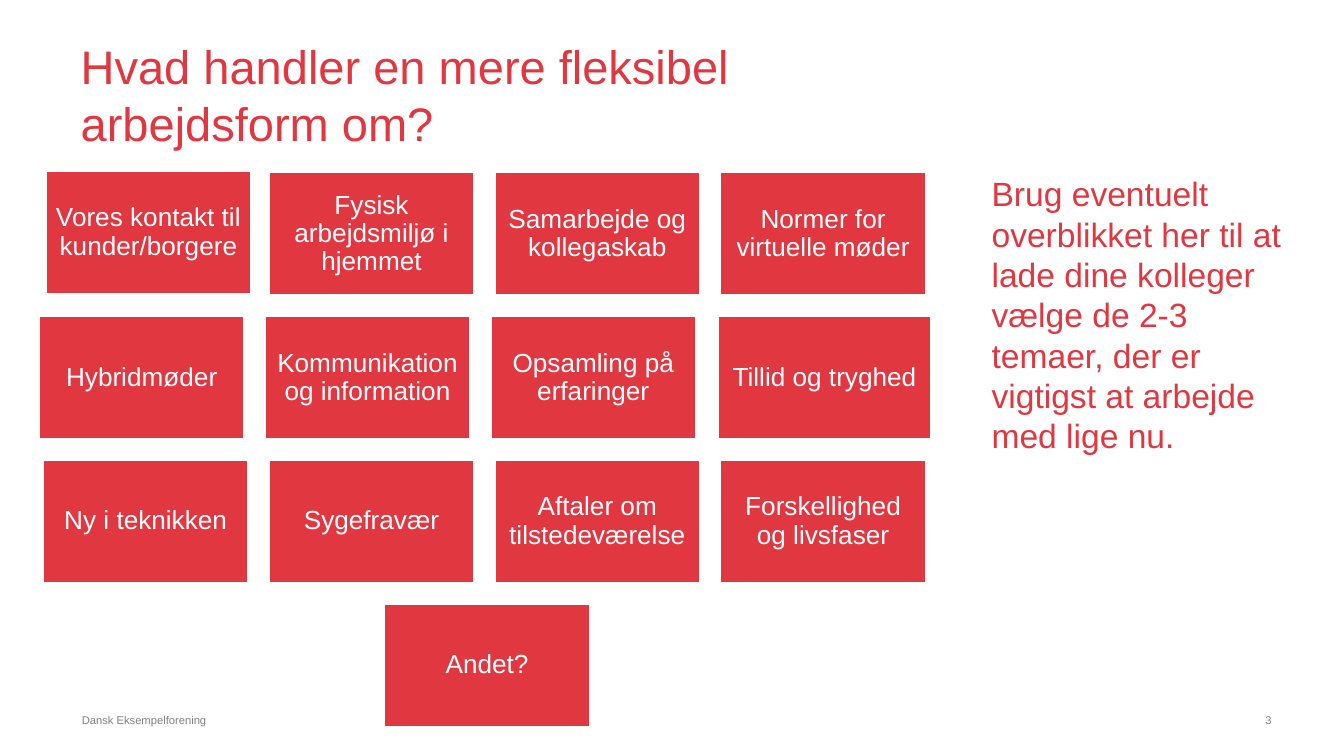
from pptx import Presentation
from pptx.dml.color import RGBColor
from pptx.enum.shapes import MSO_SHAPE as Shape
from pptx.enum.text import MSO_ANCHOR as Anchor, PP_ALIGN as Align
from pptx.util import Inches, Pt

RED, WHITE, GRAY = "E13741", "FFFFFF", "808080"
CARD_WIDTH, CARD_HEIGHT = 1.53, 0.92
COLUMN_STEP, ROW_STEP = 1.68, 1.07
FIRST_ROW_TOP = 1.28

THEME_ROWS = [
    (0.32, ["Vores kontakt til kunder/borgere", "Fysisk arbejdsmiljø i hjemmet",
            "Samarbejde og kollegaskab", "Normer for virtuelle møder"]),
    (0.29, ["Hybridmøder", "Kommunikation og information",
            "Opsamling på erfaringer", "Tillid og tryghed"]),
    (0.32, ["Ny i teknikken", "Sygefravær",
            "Aftaler om tilstedeværelse", "Forskellighed og livsfaser"]),
    (2.86, ["Andet?"]),
]
SPECIAL_PLACES = {
    "Vores kontakt til kunder/borgere": (0.34, 1.27, CARD_WIDTH),
    "Tillid og tryghed": (5.34, 2.35, 1.59),
}


def color(value):
    """Turn a hex string into a colour."""
    return RGBColor.from_string(value)


def write_text(shape, text, size=14, fill=RED, align=Align.LEFT,
               anchor=Anchor.TOP, spacing=None, margins=(0.1, 0.05)):
    """Fill a shape with one formatted paragraph."""
    frame = shape.text_frame
    frame.word_wrap = True
    frame.vertical_anchor = anchor
    frame.margin_left = frame.margin_right = Inches(margins[0])
    frame.margin_top = frame.margin_bottom = Inches(margins[1])
    paragraph = frame.paragraphs[0]
    paragraph.alignment = align
    paragraph.line_spacing = spacing
    run = paragraph.add_run()
    run.text = text
    run.font.name = "Arial"
    run.font.size = Pt(size)
    run.font.color.rgb = color(fill)


def add_text(slide, text, left, top, width, height, **text_format):
    """Add a text box with formatted text."""
    box = slide.shapes.add_textbox(*map(Inches, (left, top, width, height)))
    write_text(box, text, **text_format)


def add_title(slide, text):
    """Place and fill the title placeholder."""
    title = slide.shapes.title
    title.left, title.top = Inches(0.5), Inches(0.23)
    title.width, title.height = Inches(6.07), Inches(0.94)
    write_text(title, text, size=25.2, anchor=Anchor.MIDDLE)


def add_card(slide, text, left, top, width):
    """Add a red theme card."""
    card = slide.shapes.add_shape(
        Shape.RECTANGLE, *map(Inches, (left, top, width, CARD_HEIGHT)))
    card.shadow.inherit = False
    card.fill.solid()
    card.fill.fore_color.rgb = color(RED)
    card.line.color.rgb = color(WHITE)
    card.line.width = Pt(1.25)
    write_text(card, text, fill=WHITE, align=Align.CENTER,
               anchor=Anchor.MIDDLE, spacing=0.9, margins=(0.06, 0.06))


def add_theme_cards(slide):
    """Lay out the theme cards in rows."""
    for row, (left, themes) in enumerate(THEME_ROWS):
        for column, theme in enumerate(themes):
            place = (left + column * COLUMN_STEP,
                     FIRST_ROW_TOP + row * ROW_STEP, CARD_WIDTH)
            add_card(slide, theme, *SPECIAL_PLACES.get(theme, place))


def main():
    """Build and save the slide."""
    presentation = Presentation()
    presentation.slide_width = Inches(10)
    presentation.slide_height = Inches(10 * 9 / 16)
    slide = presentation.slides.add_slide(presentation.slide_layouts[5])
    add_text(slide, "Dansk Eksempelforening", 0.51, 5.26, 2.99, 0.2,
             size=6, fill=GRAY)
    add_text(slide, "3", 6.57, 5.26, 2.99, 0.2,
             size=6, fill=GRAY, align=Align.RIGHT)
    add_title(slide, "Hvad handler en mere fleksibel arbejdsform om?")
    add_theme_cards(slide)
    add_text(slide, "Brug eventuelt overblikket her til at lade dine kolleger "
             "vælge de 2-3 temaer, der er vigtigst at arbejde med lige nu.",
             7.28, 1.24, 2.44, 2.22, size=18)
    presentation.save("out.pptx")


if __name__ == "__main__":
    main()
